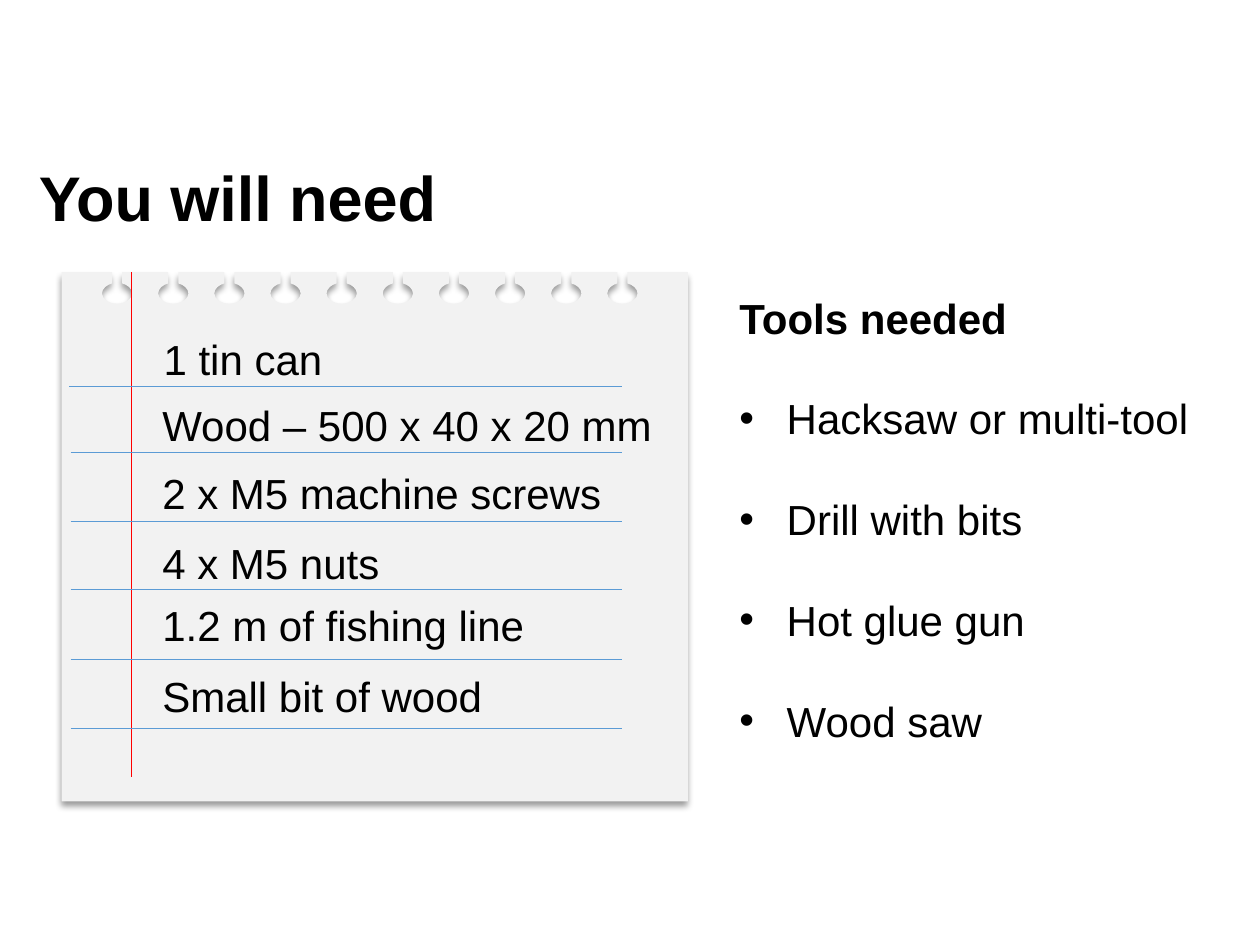
from dataclasses import dataclass

from lxml.etree import SubElement
from pptx import Presentation
from pptx.dml.color import RGBColor
from pptx.enum.shapes import MSO_CONNECTOR
from pptx.enum.text import MSO_ANCHOR
from pptx.oxml.ns import qn
from pptx.util import Inches, Pt


@dataclass(frozen=True)
class Theme:
    font: str = "Arial"
    ink: str = "000000"
    paper: str = "F2F2F2"
    rule: str = "5B9BD5"
    margin: str = "FF0000"
    title: float = 36
    body: float = 24
    gap: float = 28.75
    hair: float = 0.5


@dataclass(frozen=True)
class Box:
    left: float
    top: float
    width: float
    height: float


@dataclass(frozen=True)
class Row:
    text: str
    top: float
    width: float
    rule: float
    left: float = 1.19
    start: float = 0.56


THEME = Theme()
PAPER = Box(0.49, 2.16, 4.97, 4.2)
ROWS = [
    Row("1 tin can", 2.6, 4.78, 3.07, left=1.2, start=0.55),
    Row("Wood – 500 x 40 x 20 mm", 3.12, 5.35, 3.59),
    Row("2 x M5 machine screws", 3.66, 4.23, 4.14),
    Row("4 x M5 nuts", 4.22, 4.23, 4.68),
    Row("1.2 m of fishing line", 4.71, 3.56, 5.23),
    Row("Small bit of wood", 5.27, 3.81, 5.78),
]
TOOLS = ["Hacksaw or multi-tool", "Drill with bits", "Hot glue gun", "Wood saw"]
HALF = [(-0.04, 0), (-0.04, 0.09), (-0.08, 0.1), (-0.12, 0.13), (-0.12, 0.17),
        (-0.12, 0.21), (-0.07, 0.25)]
HOLE = [*HALF, (0, 0.25), *((-x, y) for x, y in reversed(HALF))]
CURVES = range(2, 14, 3)


def bend(lines: list) -> None:
    for first, *rest in (lines[i:i + 3] for i in CURVES):
        first.tag = qn("a:cubicBezTo")
        for line in rest:
            first.append(line[0])
            line.getparent().remove(line)


def add_paper(slide, box: Box, holes: int = 10) -> None:
    right, base = box.left + box.width, box.top + box.height
    mids = [0.93 + i * 4.01 / (holes - 1) for i in range(holes)]
    points = [(mid + x, box.top + y) for mid in mids for x, y in HOLE]
    points += [(right, box.top), (right, base), (box.left, base)]
    pen = slide.shapes.build_freeform(Inches(box.left), Inches(box.top))
    pen.add_line_segments([(Inches(x), Inches(y)) for x, y in points], close=True)
    sheet = pen.convert_to_shape()
    lines = list(sheet._element.iter(qn("a:lnTo")))
    for i in range(holes):
        bend(lines[i * len(HOLE):(i + 1) * len(HOLE)])
    sheet.fill.solid()
    sheet.fill.fore_color.rgb = RGBColor.from_string(THEME.paper)
    sheet.line.fill.background()
    sheet.shadow.inherit = False
    fx = sheet._element.spPr.find(qn("a:effectLst"))
    shade = SubElement(fx, qn("a:outerShdw"), blurRad=str(Pt(4)), dist=str(Pt(3)),
                       dir="5400000", algn="t", rotWithShape="0")
    tint = SubElement(shade, qn("a:srgbClr"), val=THEME.ink)
    SubElement(tint, qn("a:alpha"), val="40000")


def add_rule(slide, x1: float, y1: float, x2: float, y2: float, hue: str) -> None:
    rule = slide.shapes.add_connector(
        MSO_CONNECTOR.STRAIGHT, Inches(x1), Inches(y1), Inches(x2), Inches(y2))
    rule.line.color.rgb = RGBColor.from_string(hue)
    rule.line.width = Pt(THEME.hair)
    SubElement(rule._element.spPr, qn("a:effectLst"))


def style(para, text: str, size: float = THEME.body, bold: bool = False,
          bullet: bool = False, before: float = 0, lead: float = 1) -> None:
    para.text = text
    para.space_before = Pt(before)
    para.line_spacing = lead
    if bullet:
        props = para._p.get_or_add_pPr()
        props.set("marL", str(Inches(3 / 8)))
        props.set("indent", str(Inches(-3 / 8)))
        SubElement(props, qn("a:buFont"), typeface=THEME.font)
        SubElement(props, qn("a:buChar"), char="•")
    font = para.runs[0].font
    font.name, font.size, font.bold = THEME.font, Pt(size), bold
    font.color.rgb = RGBColor.from_string(THEME.ink)


def add_text(slide, box: Box, text: str, anchor=MSO_ANCHOR.TOP, **form):
    shape = slide.shapes.add_textbox(
        Inches(box.left), Inches(box.top), Inches(box.width), Inches(box.height))
    frame = shape.text_frame
    frame.word_wrap = True
    frame.vertical_anchor = anchor
    style(frame.paragraphs[0], text, **form)
    return frame


def main() -> None:
    deck = Presentation()
    deck.slide_width, deck.slide_height = Inches(10), Inches(7.5)
    slide = deck.slides.add_slide(deck.slide_layouts[6])

    add_paper(slide, PAPER)
    add_rule(slide, 1.04, PAPER.top, 1.04, 6.17, THEME.margin)
    for row in ROWS:
        add_rule(slide, row.start, row.rule, 4.94, row.rule, THEME.rule)
    for row in ROWS:
        add_text(slide, Box(row.left, row.top, row.width, 0.5), row.text)

    add_text(slide, Box(0.21, 1.2, 3.58, 0.79), "You will need",
             anchor=MSO_ANCHOR.MIDDLE, size=THEME.title, bold=True, lead=0.9)
    tools = add_text(slide, Box(5.77, 2.27, 3.81, 3.74), "Tools needed", bold=True)
    for tool in TOOLS:
        style(tools.add_paragraph(), tool, bullet=True, before=THEME.gap)

    deck.save("out.pptx")


if __name__ == "__main__":
    main()
